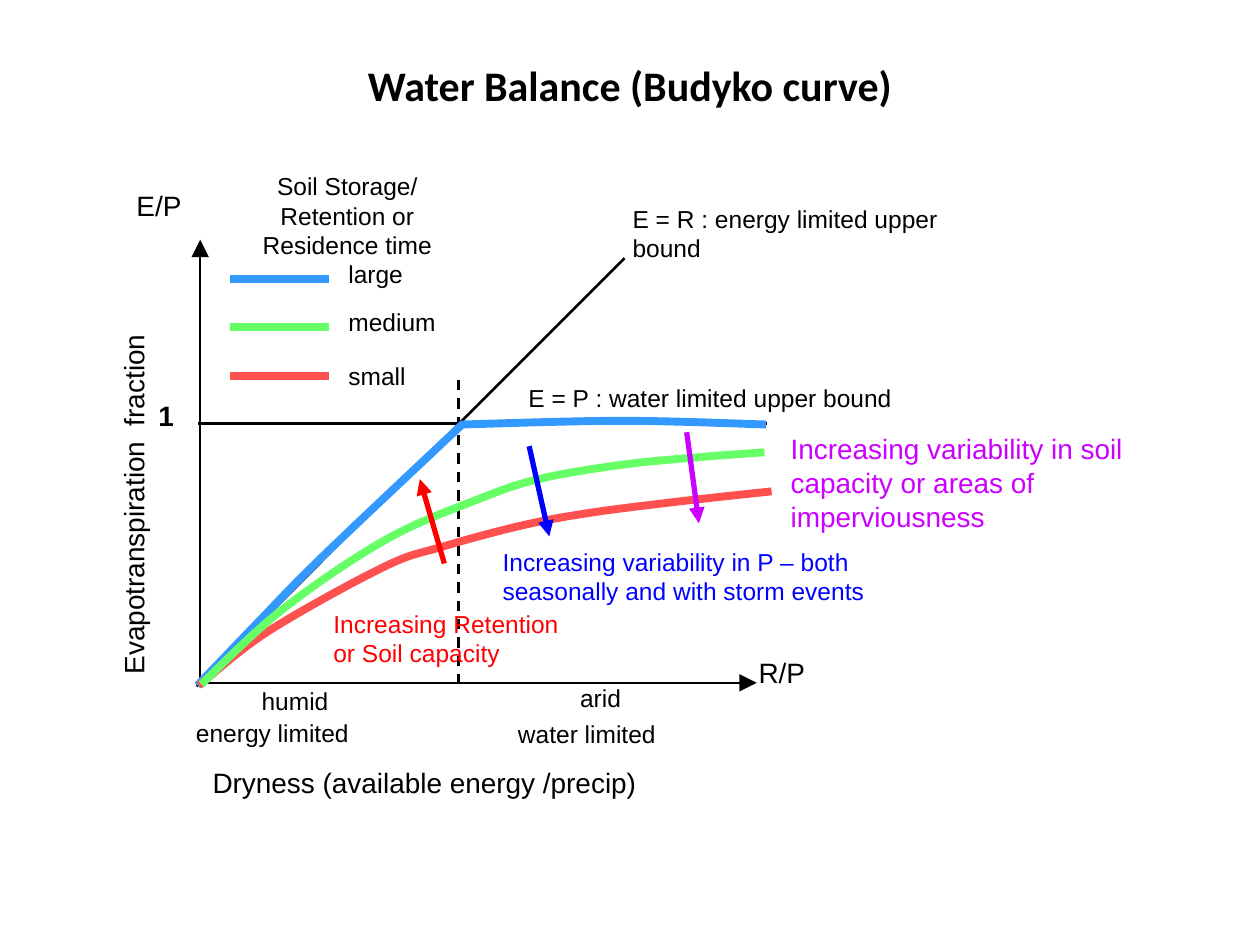
from dataclasses import dataclass
from lxml import etree
from pptx import Presentation
from pptx.dml.color import RGBColor
from pptx.enum import dml, shapes, text
from pptx.oxml import ns
from pptx.util import Pt


@dataclass(frozen=True)
class Theme:
    ink: str = "000000"
    large: str = "3399FF"
    medium: str = "66FF66"
    small: str = "FF5050"
    soil: str = "CC00FF"
    storm: str = "0000FF"
    retain: str = "FF0000"
    head: str = "Calibri"
    body: str = "Arial"
    title: int = 24
    axis: int = 16
    label: int = 14
    thin: float = 1.5
    arrow: float = 3
    thick: float = 4.5


T = Theme()
MID, LEFT = text.PP_ALIGN.CENTER, text.PP_ALIGN.LEFT


def write(slide, box, words, size=T.label, color=T.ink, font=T.body, bold=False,
          align=LEFT, anchor=text.MSO_ANCHOR.TOP, wrap=True, turn=0):
    item = slide.shapes.add_textbox(*map(Pt, box))
    item.rotation = turn
    frame = item.text_frame
    frame.word_wrap = wrap
    frame.vertical_anchor = anchor
    par = frame.paragraphs[0]
    par.alignment = align
    run = par.add_run()
    run.text = words
    run.font.name, run.font.size, run.font.bold = font, Pt(size), bold
    run.font.color.rgb = RGBColor.from_string(color)


def stroke(line, color, width):
    line.color.rgb = RGBColor.from_string(color)
    line.width = Pt(width)


def rule(slide, box, start, end, color=T.ink, width=T.thin, arrow=None, dash=False):
    x, y = box[:2]
    item = slide.shapes.add_connector(
        shapes.MSO_CONNECTOR.STRAIGHT, Pt(x + start[0]), Pt(y + start[1]),
        Pt(x + end[0]), Pt(y + end[1]))
    stroke(item.line, color, width)
    if dash:
        item.line.dash_style = dml.MSO_LINE.DASH
    props = item._element.spPr
    if arrow:
        etree.SubElement(props.find(ns.qn("a:ln")), ns.qn("a:tailEnd"),
                         type="triangle", w=arrow, len=arrow)
    etree.SubElement(props, ns.qn("a:effectLst"))


def smooth(knots):
    """Bezier controls and end of each span of a curve through the knots."""
    ext = [knots[0], *knots, knots[-1]]
    return [((b[0] + (c[0] - a[0]) / 6, b[1] + (c[1] - a[1]) / 6),
             (c[0] - (d[0] - b[0]) / 6, c[1] - (d[1] - b[1]) / 6), c)
            for a, b, c, d in zip(ext, ext[1:], ext[2:], ext[3:])]


def curve(slide, box, color, *parts):
    def spot(point):
        return Pt(box[0] + point[0]), Pt(box[1] + point[1])

    spans = [span for part in parts for span in smooth(part)]
    pen = slide.shapes.build_freeform(*spot(parts[0][0]))
    pen.add_line_segments([spot(span[-1]) for span in spans], close=False)
    item = pen.convert_to_shape()
    item.shadow.inherit = False
    item.fill.background()
    stroke(item.line, color, T.thick)
    # Bend each straight segment
    lines = list(item._element.iter(ns.qn("a:lnTo")))
    for line, span in zip(lines, spans):
        bez = etree.Element(ns.qn("a:cubicBezTo"))
        for x, y in map(spot, span):
            etree.SubElement(bez, ns.qn("a:pt"), x=str(x - item.left), y=str(y - item.top))
        line.getparent().replace(line, bez)


def place(box, x, y, w, h):
    return box[0] + x, box[1] + y, w, h


def title(slide, box):
    write(slide, box, "Water Balance (Budyko curve)", size=T.title, font=T.head,
          bold=True, align=MID, anchor=text.MSO_ANCHOR.MIDDLE)


def axes(slide, box):
    w, h = box[2:]
    rule(slide, box, (0, h), (w, h), arrow="lg")
    rule(slide, box, (0, h), (0, 0), arrow="lg")
    write(slide, place(box, -166, 114, 256, 27), "Evapotranspiration  fraction",
          size=T.axis, turn=270)
    write(slide, place(box, -31, 87, 76, 27), "1", size=T.axis, bold=True)
    # Axis names and climate zones
    for x, y, wide, words, size in (
            (0, 297, 257, "Dryness (available energy /precip)", T.axis),
            (312, 234, 41, "R/P", T.axis),
            (-43.5, -33, 40, "E/P", T.axis),
            (28, 251.5, 53, "humid", T.label),
            (210, 249.5, 38, "arid", T.label),
            (-9.5, 270, 102, "energy limited", T.label),
            (174.5, 270.5, 94, "water limited", T.label)):
        write(slide, place(box, x, y, wide, 25), words, size=size, wrap=False)


def bounds(slide, box):
    h = box[3]
    rule(slide, box, (-1.5, 105), (324, 105))
    rule(slide, box, (-2, h + 2), (242.5, 10.5))
    rule(slide, box, (147.5, 80), (147.5, h), dash=True)
    write(slide, place(box, 240, -24, 200, 41), "E = R : energy limited upper bound")
    write(slide, place(box, 180.5, 78.5, 245, 25), "E = P : water limited upper bound")


def curves(slide, box):
    bend = (149.7, 105.6)
    curve(slide, box, T.large,
          [(-1.5, 254.7), (33, 218.7), (69.8, 181.2), bend],
          [bend, (241, 103.5), (323.3, 105.6)])
    curve(slide, box, T.small,
          [(-0.7, 254.7), (39, 223.7), (105, 187), (138.2, 175.5), (184.3, 163.2),
           (223.2, 156), (273.6, 149.6), (326.5, 143.8)])
    curve(slide, box, T.medium,
          [(0.7, 254), (46.8, 211.5), (106.5, 171.2), (159.8, 148), (194.4, 136.6),
           (240.5, 128.7), (283.7, 124.4), (322.5, 121.5)])


def legend(slide, box):
    write(slide, place(box, 0, 0.3, box[2], 58),
          "Soil Storage/ Retention or Residence time", align=MID)
    rows = (("large", T.large, 50.5, 46), ("medium", T.medium, 78, 65),
            ("small", T.small, 109, 48))
    for i, (words, color, top, wide) in enumerate(rows):
        y = 65.2 + 27.75 * i
        rule(slide, box, (6.3, y), (63, y), color=color, width=T.thick)
        write(slide, place(box, 67, top, wide, 25), words, wrap=False)


def notes(slide, box):
    for start, end, color, spot, size, words in (
            ((278, 110), (285, 162), T.soil, (330.3, 106.3, 204.5, 65), T.axis,
             "Increasing variability in soil capacity or areas of imperviousness"),
            ((188, 118), (199.5, 169.5), T.storm, (165.7, 172, 225.5, 41), T.label,
             "Increasing variability in P – both seasonally and with storm events"),
            ((139.5, 185), (125.5, 136.8), T.retain, (69, 207.3, 146, 41), T.label,
             "Increasing Retention or Soil capacity")):
        rule(slide, box, start, end, color=color, width=T.arrow, arrow="med")
        write(slide, place(box, *spot), words, size=size, color=color)


def main():
    deck = Presentation()
    deck.slide_width, deck.slide_height = Pt(720), Pt(540)
    slide = deck.slides.add_slide(deck.slide_layouts[6])
    plot = (114.4, 137, 318, 253.2)
    title(slide, (36, 22, 648, 53))
    for part in (axes, bounds, curves):
        part(slide, plot)
    legend(slide, (125, 94, 147, 142))
    notes(slide, plot)
    deck.save("out.pptx")


if __name__ == "__main__":
    main()
